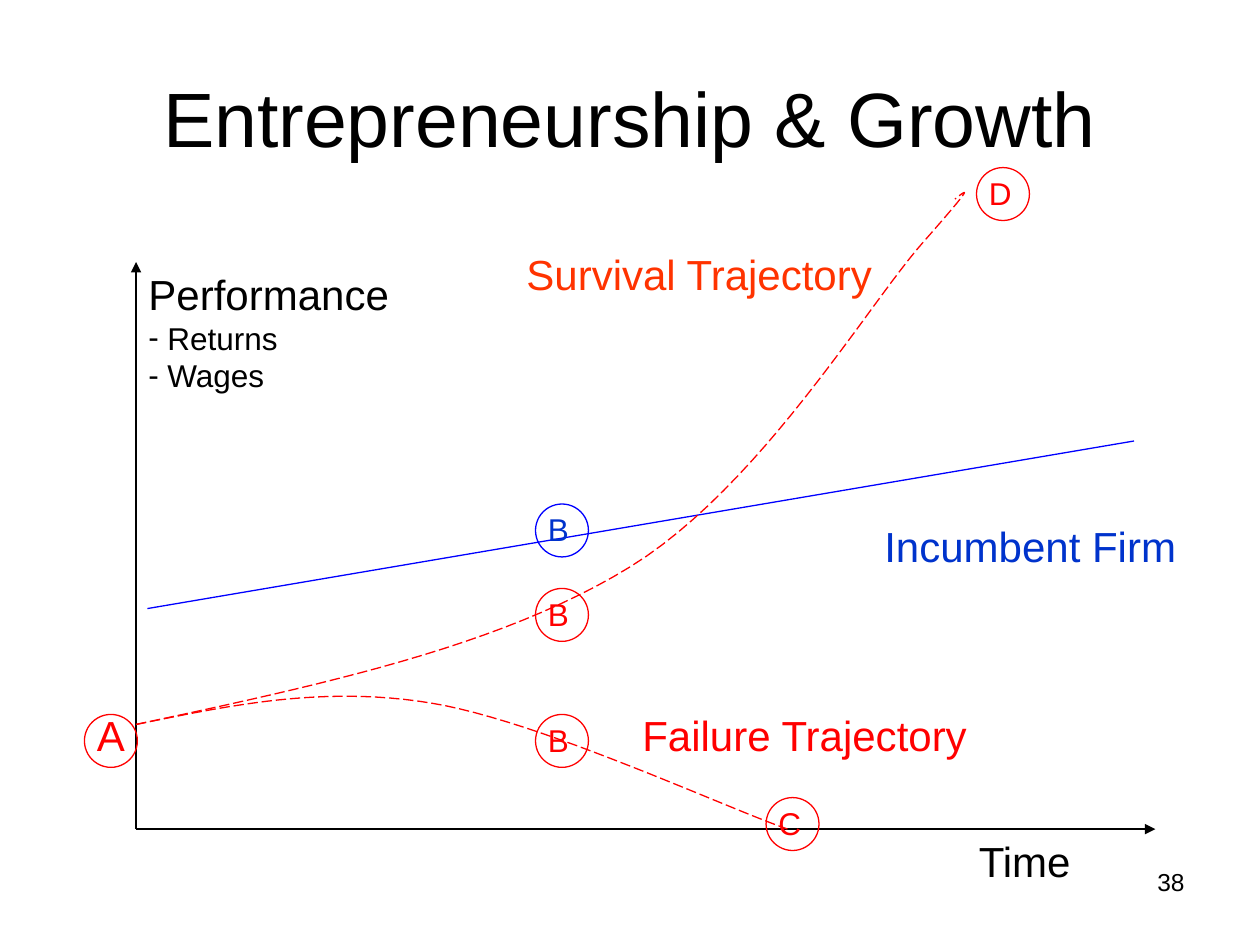
from dataclasses import dataclass

from lxml import etree
from pptx import Presentation
from pptx import util as u
from pptx.dml.color import RGBColor
from pptx.enum import dml, shapes, text
from pptx.oxml import ns

BLACK = RGBColor(0x00, 0x00, 0x00)
RED = RGBColor(0xFF, 0x00, 0x00)
ORANGE = RGBColor(0xFF, 0x33, 0x00)
BLUE = RGBColor(0x00, 0x00, 0xFF)
NAVY = RGBColor(0x00, 0x33, 0xCC)
DIAMETER = 0.42
STEPS = 24
BULLET_INDENT = u.Inches(0.15)

Point = tuple[float, float]


@dataclass
class Label:
    words: str
    left: float
    top: float
    width: float
    height: float = 0.5
    size: int = 24
    color: RGBColor = BLACK
    align: text.PP_ALIGN = text.PP_ALIGN.LEFT
    wrap: bool = False


@dataclass
class Stage:
    letter: str
    left: float
    top: float
    ring: RGBColor = RED
    color: RGBColor = RED
    size: int = 18
    letter_top: float | None = None
    letter_width: float = 0.37
    wrap: bool = False


@dataclass
class Line:
    start: Point
    end: Point
    color: RGBColor = BLACK
    arrow: bool = True


@dataclass
class Trajectory:
    start: Point
    segments: list[tuple[Point, Point, Point]]


LABELS = [
    Label("38", 7.17, 6.83, 2.33, 0.52, 14, align=text.PP_ALIGN.RIGHT, wrap=True),
    Label("Incumbent Firm", 6.92, 4.08, 2.52, color=NAVY),
    Label("Survival Trajectory", 4.08, 1.92, 2.96, color=ORANGE),
    Label("Failure Trajectory", 5, 5.58, 2.8, color=RED),
    Label("Time", 7.67, 6.58, 0.94),
]
TITLE = Label("Entrepreneurship & Growth", 0.5, 0.3, 9, 1.25, 44,
              align=text.PP_ALIGN.CENTER, wrap=True)
PERFORMANCE = Label("Performance", 1.08, 2.08, 2.11, 1.1)
MEASURES = ["Returns", "Wages"]
ORIGIN = (1.08, 6.58)
LINES = [
    Line(ORIGIN, (1.08, 2.08)),
    Line(ORIGIN, (9.17, 6.58)),
    Line((1.17, 4.83), (9, 3.5), BLUE, arrow=False),
]
LAUNCH = (1.08, 5.75)
TRAJECTORIES = [
    Trajectory(LAUNCH, [
        ((2.52, 5.44), (3.96, 5.14), (5, 4.5)),
        ((6.04, 3.86), (6.9, 2.4), (7.33, 1.92)),
        ((7.76, 1.43), (7.67, 1.51), (7.58, 1.58)),
    ]),
    Trajectory(LAUNCH, [
        ((1.82, 5.6), (2.56, 5.44), (3.42, 5.58)),
        ((4.28, 5.72), (5.78, 6.42), (6.25, 6.58)),
    ]),
]
STAGES = [
    Stage("B", 4.25, 4, BLUE, NAVY),
    Stage("B", 4.25, 4.67),
    Stage("B", 4.25, 5.67),
    Stage("A", 0.67, 5.67, size=24, letter_top=5.58, letter_width=0.42),
    Stage("C", 6.08, 6.33, letter_width=0.33, wrap=True),
    Stage("D", 7.75, 1.33, letter_width=0.33, wrap=True),
]


def style_font(paragraph, size: int, color: RGBColor) -> None:
    paragraph.font.name = "Arial"
    paragraph.font.size = u.Pt(size)
    paragraph.font.color.rgb = color


def add_label(slide, label: Label):
    box = slide.shapes.add_textbox(*map(u.Inches, (label.left, label.top, label.width, label.height)))
    frame = box.text_frame
    frame.word_wrap = label.wrap
    paragraph = frame.paragraphs[0]
    paragraph.text = label.words
    paragraph.alignment = label.align
    style_font(paragraph, label.size, label.color)
    return frame


def add_bullet(frame, words: str) -> None:
    paragraph = frame.add_paragraph()
    paragraph.text = words
    style_font(paragraph, 18, BLACK)
    properties = paragraph._p.get_or_add_pPr()
    properties.set("marL", str(BULLET_INDENT))
    properties.set("indent", str(-BULLET_INDENT))
    etree.SubElement(properties, ns.qn("a:buFont"), typeface="Arial")
    etree.SubElement(properties, ns.qn("a:buChar"), char="-")


def add_line(slide, line: Line) -> None:
    connector = slide.shapes.add_connector(
        shapes.MSO_CONNECTOR.STRAIGHT, *map(u.Inches, line.start + line.end))
    connector.line.color.rgb = line.color
    connector.line.width = u.Pt(0.75)
    if line.arrow:
        etree.SubElement(connector.line._get_or_add_ln(), ns.qn("a:tailEnd"), type="triangle")
    etree.SubElement(connector._element.spPr, ns.qn("a:effectLst"))


def bezier(start: Point, first: Point, second: Point, end: Point, t: float) -> Point:
    s = 1 - t
    weights = (s ** 3, 3 * s * s * t, 3 * s * t * t, t ** 3)
    points = (start, first, second, end)
    return (sum(w * x for w, (x, _) in zip(weights, points)),
            sum(w * y for w, (_, y) in zip(weights, points)))


def outline(shape, color: RGBColor) -> None:
    shape.shadow.inherit = False
    shape.fill.background()
    shape.line.color.rgb = color
    shape.line.width = u.Pt(0.75)


def add_trajectory(slide, trajectory: Trajectory) -> None:
    start = trajectory.start
    curve = []
    for segment in trajectory.segments:
        curve += [bezier(start, *segment, step / STEPS) for step in range(1, STEPS + 1)]
        start = segment[-1]
    builder = slide.shapes.build_freeform(*map(u.Inches, trajectory.start))
    builder.add_line_segments([(u.Inches(x), u.Inches(y)) for x, y in curve], close=False)
    path = builder.convert_to_shape()
    outline(path, RED)
    path.line.dash_style = dml.MSO_LINE.LONG_DASH


def add_stage(slide, stage: Stage) -> None:
    ring = slide.shapes.add_shape(
        shapes.MSO_SHAPE.OVAL, *map(u.Inches, (stage.left, stage.top, DIAMETER, DIAMETER)))
    outline(ring, stage.ring)
    top = stage.top if stage.letter_top is None else stage.letter_top
    add_label(slide, Label(stage.letter, stage.left, top, stage.letter_width, 0.4,
                           stage.size, stage.color, wrap=stage.wrap))


def main() -> None:
    deck = Presentation()
    deck.slide_width, deck.slide_height = u.Inches(10), u.Inches(7.5)
    slide = deck.slides.add_slide(deck.slide_layouts[6])
    add_label(slide, TITLE).vertical_anchor = text.MSO_ANCHOR.MIDDLE
    for line in LINES:
        add_line(slide, line)
    for trajectory in TRAJECTORIES:
        add_trajectory(slide, trajectory)
    for label in LABELS:
        add_label(slide, label)
    performance = add_label(slide, PERFORMANCE)
    for measure in MEASURES:
        add_bullet(performance, measure)
    for stage in STAGES:
        add_stage(slide, stage)
    deck.save("out.pptx")


if __name__ == "__main__":
    main()
